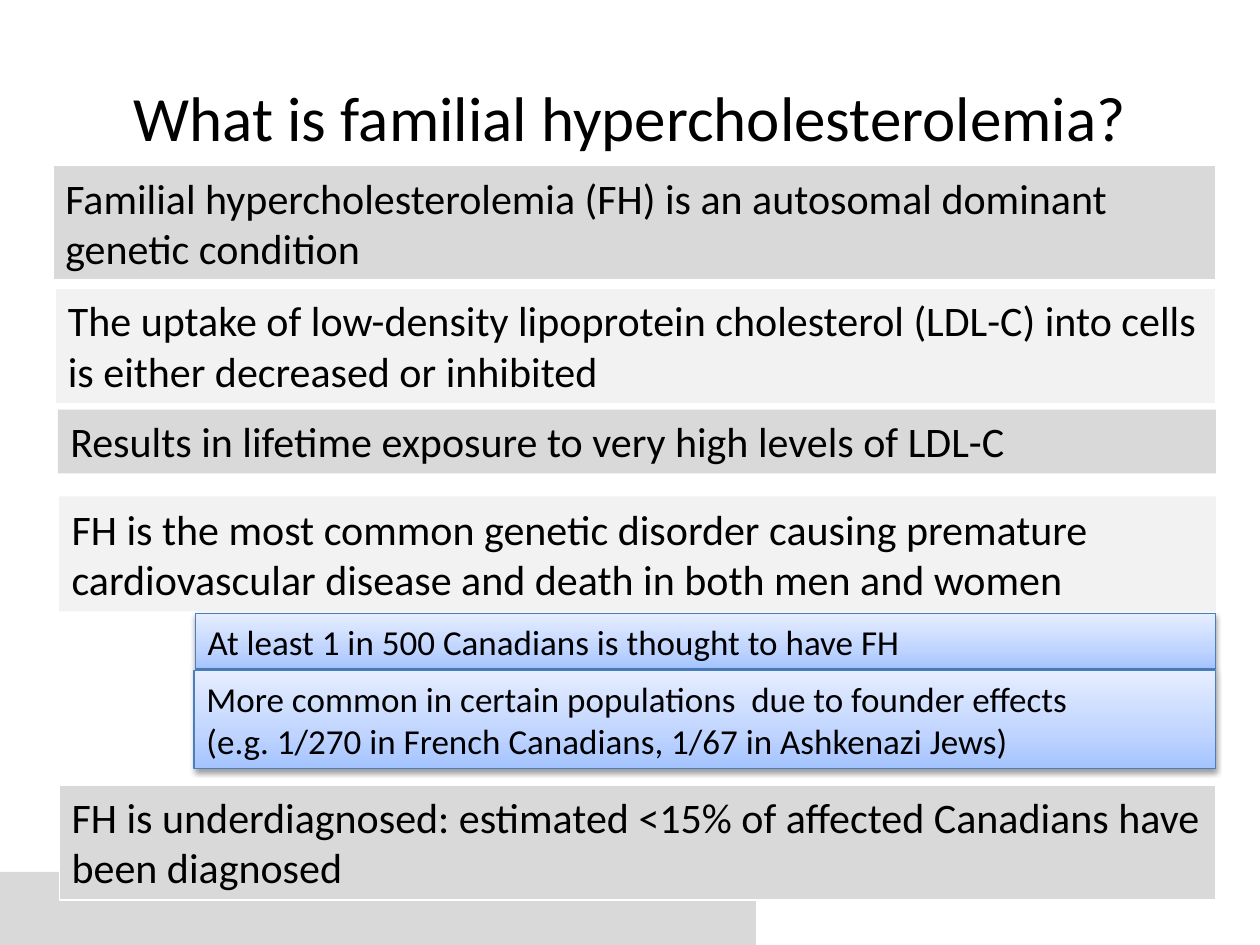
import copy
from dataclasses import dataclass

import lxml.etree
import pptx
import pptx.dml.color
import pptx.enum.shapes
import pptx.enum.text
import pptx.oxml.ns
import pptx.util

MIDDLE = pptx.enum.text.MSO_ANCHOR.MIDDLE
TOP = pptx.enum.text.MSO_ANCHOR.TOP
qn = pptx.oxml.ns.qn


@dataclass(frozen=True)
class Theme:
    font: str = "Calibri"
    title_size: int = 36
    fact_size: int = 24
    detail_size: int = 20
    line_height: float = 1.22
    text: str = "000000"
    white: str = "FFFFFF"
    dark: str = "D9D9D9"
    light: str = "F2F2F2"
    detail_line: str = "4B7EBC"
    gradient: tuple = ((0, "A4C4FF"), (0.35, "BFD4FF"), (1, "E6EEFF"))


THEME = Theme()
WIDTH, HEIGHT = 10, 7.5
RIGHT = 9.65  # shared right edge of every row

# left, top, lines, fill, outlined, anchor, text
FACTS = [
    (0.42, 1.31, 2, THEME.dark, True, MIDDLE,
     "Familial hypercholesterolemia (FH) is an autosomal dominant genetic condition"),
    (0.44, 2.29, 2, THEME.light, True, TOP,
     "The uptake of low-density lipoprotein cholesterol (LDL-C) into cells "
     "is either decreased or inhibited"),
    (0.46, 3.25, 1, THEME.dark, False, TOP,
     "Results in lifetime exposure to very high levels of LDL-C"),
    (0.47, 3.94, 2, THEME.light, False, MIDDLE,
     "FH is the most common genetic disorder causing premature "
     "cardiovascular disease and death in both men and women"),
    (0.47, 6.23, 2, THEME.dark, True, TOP,
     "FH is underdiagnosed: estimated <15% of affected Canadians have been diagnosed"),
]
# left, top, paragraphs
DETAILS = [
    (1.55, 4.87, ["At least 1 in 500 Canadians is thought to have FH"]),
    (1.54, 5.32, ["More common in certain populations  due to founder effects",
                  "(e.g. 1/270 in French Canadians, 1/67 in Ashkenazi Jews)"]),
]


def rgb(value):
    return pptx.dml.color.RGBColor.from_string(value)


def place(shape, box):
    shape.left, shape.top, shape.width, shape.height = map(pptx.util.Inches, box)


def row_box(left, top, lines, size):
    """Box from left to the shared right edge, as tall as its lines of text."""
    return left, top, RIGHT - left, 0.1 + lines * size * THEME.line_height / 72


def add_rect(slide, box, fill=None, line=None):
    s = slide.shapes.add_shape(
        pptx.enum.shapes.MSO_SHAPE.RECTANGLE, *map(pptx.util.Inches, box))
    s.shadow.inherit = False
    if fill:
        s.fill.solid()
        s.fill.fore_color.rgb = rgb(fill)
    if line:
        s.line.color.rgb = rgb(line)
        s.line.width = pptx.util.Pt(0.75)
    else:
        s.line.fill.background()
    return s


def write(shape, paragraphs, size, anchor, align=pptx.enum.text.PP_ALIGN.LEFT):
    tf = shape.text_frame
    tf.word_wrap = True
    tf.vertical_anchor = anchor
    tf.text = "\n".join(paragraphs)
    for p in tf.paragraphs:
        p.alignment = align
        p.font.name = THEME.font
        p.font.size = pptx.util.Pt(size)
        p.font.color.rgb = rgb(THEME.text)


def fit_to_text(shape):
    shape.text_frame.auto_size = pptx.enum.text.MSO_AUTO_SIZE.SHAPE_TO_FIT_TEXT


def fill_gradient(shape):
    shape.fill.gradient()
    shape.fill.gradient_angle = 90
    stops = shape.element.spPr.find(".//" + qn("a:gsLst"))
    stops.insert(1, copy.deepcopy(stops[0]))
    for stop, (position, color) in zip(shape.fill.gradient_stops, THEME.gradient):
        stop.position = position
        stop.color.rgb = rgb(color)


def add_shadow(shape):
    effects = shape.element.spPr.find(qn("a:effectLst"))
    shadow = lxml.etree.SubElement(
        effects, qn("a:outerShdw"), blurRad=str(pptx.util.Pt(3.1)),
        dist=str(pptx.util.Pt(1.6)), dir="5400000", rotWithShape="0")
    color = lxml.etree.SubElement(shadow, qn("a:srgbClr"), val=THEME.text)
    lxml.etree.SubElement(color, qn("a:alpha"), val="38000")


def add_footer_band(slide, box):
    add_rect(slide, box, THEME.dark)


def add_title(slide, box, text):
    title = slide.shapes.title
    place(title, box)
    write(title, [text], THEME.title_size, MIDDLE, pptx.enum.text.PP_ALIGN.CENTER)


def add_fact(slide, box, fill, outlined, anchor, text):
    s = add_rect(slide, box, fill, THEME.white if outlined else None)
    write(s, [text], THEME.fact_size, anchor)
    fit_to_text(s)


def add_detail(slide, box, paragraphs):
    s = add_rect(slide, box, line=THEME.detail_line)
    fill_gradient(s)
    add_shadow(s)
    write(s, paragraphs, THEME.detail_size, MIDDLE)
    fit_to_text(s)


def main():
    prs = pptx.Presentation()
    prs.slide_width = pptx.util.Inches(WIDTH)
    prs.slide_height = pptx.util.Inches(HEIGHT)
    slide = prs.slides.add_slide(prs.slide_layouts.get_by_name("Title Only"))

    add_footer_band(slide, (0, HEIGHT - 0.58, 0.6 * WIDTH, 0.58))
    add_title(slide, (0.05 * WIDTH, 0.04 * HEIGHT, 0.9 * WIDTH, HEIGHT / 6),
              "What is familial hypercholesterolemia?")
    for left, top, lines, *content in FACTS:
        add_fact(slide, row_box(left, top, lines, THEME.fact_size), *content)
    for left, top, paragraphs in DETAILS:
        box = row_box(left, top, len(paragraphs), THEME.detail_size)
        add_detail(slide, box, paragraphs)

    prs.save("out.pptx")


if __name__ == "__main__":
    main()
